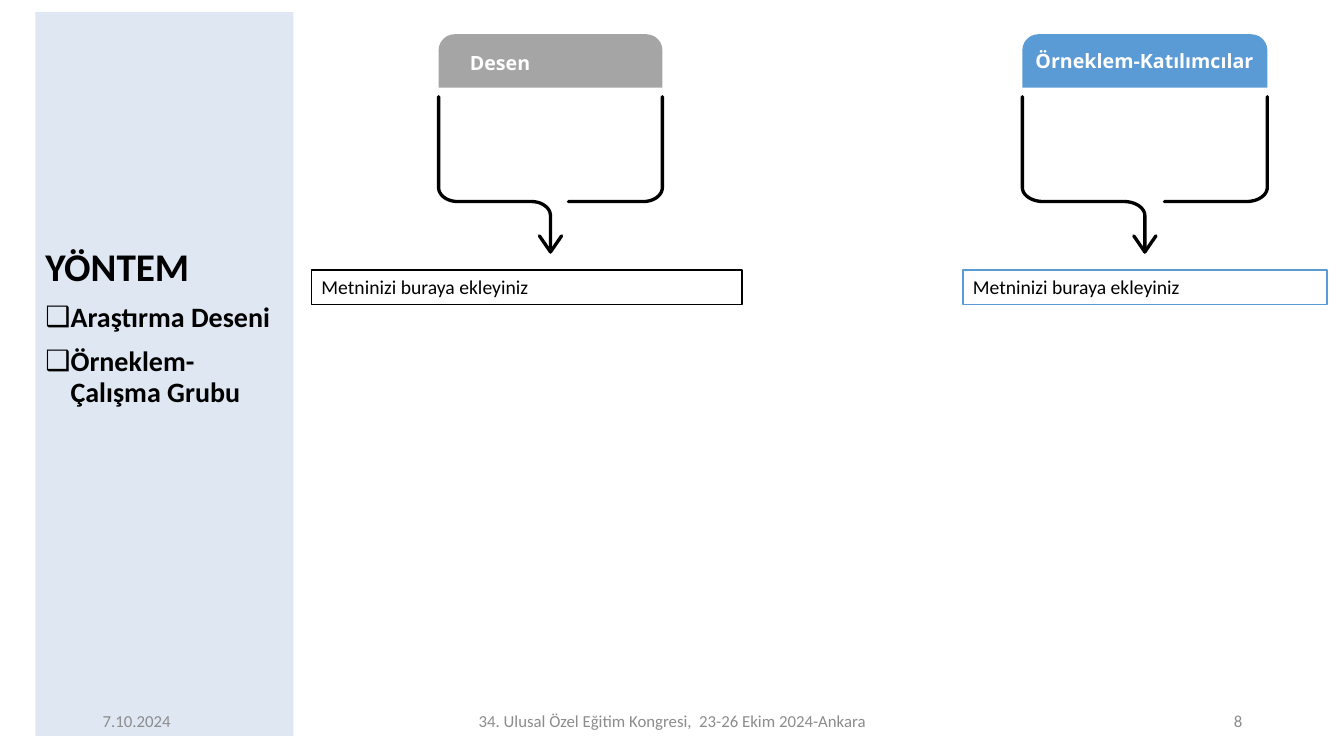
from math import cos, pi, sin

from lxml.etree import SubElement
from pptx import Presentation
from pptx.dml.color import RGBColor
from pptx.enum.shapes import MSO_SHAPE
from pptx.enum.text import MSO_ANCHOR, MSO_AUTO_SIZE, PP_ALIGN
from pptx.oxml.ns import qn
from pptx.util import Emu, Pt

EMU_PER_PX = 9144
INK, WHITE, GREY, BLUE = "000000", "FFFFFF", "A5A5A5", "5B9BD5"


def px(length):
    return Emu(round(length * EMU_PER_PX))


def paint(color_format, color):
    color_format.rgb = RGBColor.from_string(color)


def fill(shape, color, alpha=None):
    shape.fill.solid()
    paint(shape.fill.fore_color, color)
    if alpha:
        tint = shape.fill._xPr.find(qn("a:solidFill"))[0]
        SubElement(tint, qn("a:alpha")).set("val", str(alpha * 1000))


def place(shape, box):
    shape.left, shape.top, shape.width, shape.height = map(px, box)


def write(shape, *lines, size, color=INK, font="Calibri", bold=False,
          align=PP_ALIGN.LEFT, anchor=MSO_ANCHOR.TOP, insets=(10, 5, 10, 5),
          wrap=True, spacing=1.0, gap=0, bullet=None, indent=25):
    frame = shape.text_frame
    frame.auto_size = MSO_AUTO_SIZE.NONE
    frame.word_wrap = wrap
    frame.vertical_anchor = anchor
    (frame.margin_left, frame.margin_top,
     frame.margin_right, frame.margin_bottom) = map(px, insets)
    for index, line in enumerate(lines):
        paragraph = frame.add_paragraph() if index else frame.paragraphs[0]
        paragraph.text = line
        paragraph.alignment = align
        paragraph.line_spacing = spacing
        paragraph.space_before = Pt(gap if index else 0)
        if bullet:
            properties = paragraph._p.get_or_add_pPr()
            properties.set("marL", str(px(indent)))
            properties.set("indent", str(px(-indent)))
            SubElement(properties, qn("a:buChar")).set("char", bullet)
        paragraph.font.size = Pt(size)
        paragraph.font.bold = bold
        paragraph.font.name = font
        paint(paragraph.font.color, color)


def corner(start, bend, end, steps=12):
    angles = [step * pi / 2 / steps for step in range(steps + 1)]
    return [tuple(b + (s - b) * (1 - sin(t)) + (e - b) * (1 - cos(t))
                  for s, b, e in zip(start, bend, end)) for t in angles]


def stroke(shapes, points):
    first, *rest = [(px(x), px(y)) for x, y in points]
    builder = shapes.build_freeform(*first)
    builder.add_line_segments(rest, close=False)
    line = builder.convert_to_shape()
    line.shadow.inherit = False
    line.fill.background()
    line.line.width = Pt(2.38)
    paint(line.line.color, INK)
    outline = line.line._get_or_add_ln()
    outline.set("cap", "rnd")
    SubElement(outline, qn("a:round"))


def draw_sidebar(slide, box, heading, topics):
    left, top, width, _ = box
    title, body = slide.shapes.title, slide.placeholders[1]
    place(body, box)
    fill(body, "D2DEEF", alpha=71)
    write(body, *topics, size=20, bold=True, spacing=0.9, gap=10,
          insets=(10, 289, 10, 5), bullet="❑")
    place(title, (left, top + 234, width, 43))
    write(title, heading, size=28, bold=True, spacing=0.9, insets=(10, 0, 10, 0))
    slide.shapes._spTree.remove(body._element)
    slide.shapes._spTree.insert_element_before(body._element, "p:sp")
    title._element.addprevious(body._element)


def draw_callout(slide, box, heading, color, label_offset):
    left, top, width, height = box
    shapes = slide.shapes.add_group_shape().shapes
    right, middle, tip = left + width, left + width / 2, top + height
    brace_top, brace_bottom = top + 62, top + 166
    curve_x, curve_y = 0.085 * width, 14

    cap = shapes.add_shape(MSO_SHAPE.ROUND_2_SAME_RECTANGLE,
                           *map(px, (left, top, width, 53)))
    cap.adjustments[0] = 0.3
    cap.shadow.inherit = False
    fill(cap, color)
    cap.line.fill.background()

    stroke(shapes, [(left, brace_top)]
           + corner((left, brace_bottom - curve_y), (left, brace_bottom),
                    (left + curve_x, brace_bottom))
           + corner((middle - curve_x, brace_bottom), (middle, brace_bottom),
                    (middle, brace_bottom + curve_y))
           + [(middle, tip)])
    stroke(shapes, [(middle + 0.08 * width, brace_bottom)]
           + corner((right - curve_x, brace_bottom), (right, brace_bottom),
                    (right, brace_bottom - curve_y))
           + [(right, brace_top)])
    stroke(shapes, [(middle + 11, tip - 16), (middle, tip), (middle - 11, tip - 16)])

    offset_x, offset_y = label_offset
    label = shapes.add_textbox(*map(px, (left + offset_x, top + offset_y,
                                         width - 2 * offset_x, 24)))
    write(label, heading, size=14, color=WHITE, font="Open Sans", bold=True,
          insets=(0, 0, 0, 0), wrap=False)


def draw_entry(slide, box, prompt, border):
    entry = slide.shapes.add_shape(MSO_SHAPE.RECTANGLE, *map(px, box))
    entry.shadow.inherit = False
    fill(entry, WHITE)
    entry.line.width = Pt(1)
    paint(entry.line.color, border)
    write(entry, prompt, size=14, align=PP_ALIGN.JUSTIFY)


def draw_footer(slide, box, date, event, number):
    left, top, width, height = box
    side = 300
    parts = [(date, left, side, PP_ALIGN.LEFT),
             (event, left + side + 50, width - 2 * (side + 50), PP_ALIGN.CENTER),
             (number, left + width - side, side, PP_ALIGN.RIGHT)]
    for text, part_left, part_width, align in parts:
        part = slide.shapes.add_textbox(*map(px, (part_left, top, part_width, height)))
        write(part, text, size=12, color="8C8C8C", align=align,
              anchor=MSO_ANCHOR.MIDDLE)


def main():
    deck = Presentation()
    deck.slide_width, deck.slide_height = px(1333), px(750)
    slide = deck.slides.add_slide(deck.slide_layouts[1])
    draw_sidebar(slide, (35, 12, 256, 718), "YÖNTEM",
                 ["Araştırma Deseni", "Örneklem-Çalışma Grubu"])
    draw_callout(slide, (435, 34, 222, 216), "Desen", GREY, (31, 17))
    draw_callout(slide, (1014, 34, 243, 216), "Örneklem-Katılımcılar", BLUE, (13, 15))
    prompt = "Metninizi buraya ekleyiniz"
    draw_entry(slide, (309, 268, 427, 34), prompt, INK)
    draw_entry(slide, (955, 268, 361, 34), prompt, BLUE)
    draw_footer(slide, (92, 695, 1150, 40), "7.10.2024",
                "34. Ulusal Özel Eğitim Kongresi,  23-26 Ekim 2024-Ankara", "8")
    deck.save("out.pptx")


if __name__ == "__main__":
    main()
